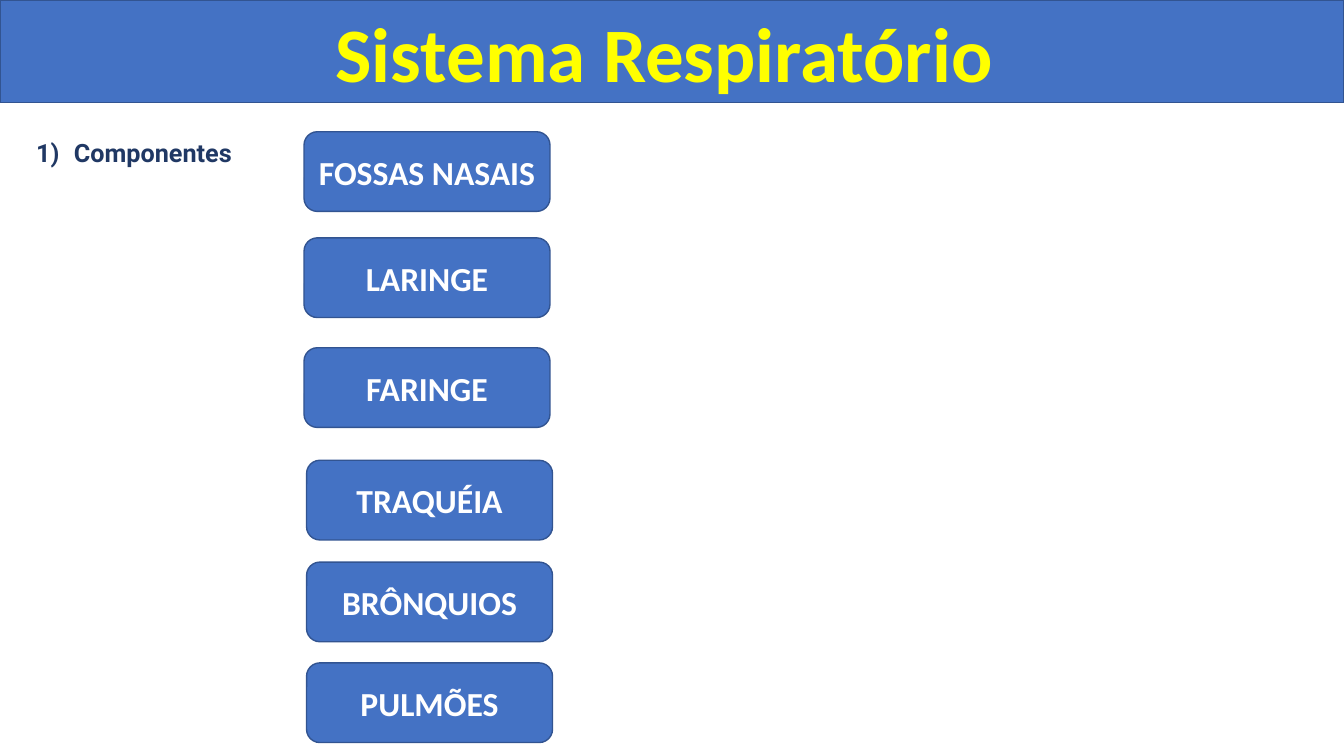
from lxml.etree import Element
from pptx import Presentation
from pptx.dml.color import RGBColor
from pptx.enum.shapes import MSO_SHAPE as Shape
from pptx.enum.text import MSO_ANCHOR as Anchor, MSO_AUTO_SIZE as AutoSize, PP_ALIGN as Align
from pptx.oxml.ns import qn
from pptx.util import Pt

COLORS = {"blue": "4472C4", "outline": "325491", "yellow": "FFFF00",
          "navy": "203864", "white": "FFFFFF"}
ORGANS = ["FOSSAS NASAIS", "LARINGE", "FARINGE", "TRAQUÉIA", "BRÔNQUIOS", "PULMÕES"]
ORGAN_OFFSETS = [(0, 0), (0, 75.8), (0, 154.3), (1.8, 234.7), (1.8, 307.4), (1.8, 379.4)]


def color(name):
    """Return the named colour."""
    return RGBColor.from_string(COLORS[name])


def write(frame, text, size, font, tint, align):
    """Fill a text frame with one bold paragraph and return it."""
    frame.word_wrap = True
    para = frame.paragraphs[0]
    para.text = text
    para.alignment = align
    para.font.size = Pt(size)
    para.font.name = font
    para.font.bold = True
    para.font.color.rgb = color(tint)
    return para


def add_box(page, kind, left, top, width, height):
    """Add a blue outlined shape."""
    box = page.shapes.add_shape(kind, Pt(left), Pt(top), Pt(width), Pt(height))
    box.shadow.inherit = False
    box.fill.solid()
    box.fill.fore_color.rgb = color("blue")
    box.line.color.rgb = color("outline")
    box.line.width = Pt(1)
    return box


def add_header(page, left, top, width, height):
    """Place the title over a full-width band."""
    band = add_box(page, Shape.RECTANGLE, left, top, width, height)
    title = page.shapes.title
    title.element.addprevious(band.element)
    title.left, title.top = Pt(left + 120.2), Pt(top)
    title.width, title.height = Pt(708.5), Pt(height + 0.7)
    frame = title.text_frame
    write(frame, "Sistema Respiratório", 55, "Calibri", "yellow", Align.CENTER)
    frame.vertical_anchor = Anchor.TOP
    frame.auto_size = AutoSize.SHAPE_TO_FIT_TEXT


def add_topic(page, left, top, width, height):
    """Add the numbered topic heading."""
    box = page.shapes.add_textbox(Pt(left), Pt(top), Pt(width), Pt(height))
    para = write(box.text_frame, "Componentes", 18, "Roboto", "navy", Align.JUSTIFY)
    box.text_frame.auto_size = AutoSize.SHAPE_TO_FIT_TEXT
    properties = para._p.get_or_add_pPr()
    properties.set("marL", str(Pt(27)))
    properties.set("indent", str(-Pt(27)))
    properties.insert(0, Element(qn("a:buAutoNum"), type="arabicParenR"))


def add_organs(page, left, top, width, height):
    """Stack one rounded box for each organ."""
    for organ, (across, down) in zip(ORGANS, ORGAN_OFFSETS):
        box = add_box(page, Shape.ROUNDED_RECTANGLE, left + across, top + down, width, height)
        write(box.text_frame, organ, 24, "Calibri", "white", Align.CENTER)
        box.text_frame.vertical_anchor = Anchor.MIDDLE


def main():
    """Build and save the deck."""
    deck = Presentation()
    deck.slide_width, deck.slide_height = Pt(960), Pt(540)
    page = deck.slides.add_slide(deck.slide_layouts[5])
    add_header(page, 0, 0, 960, 73.4)
    add_topic(page, 18.7, 94.3, 481, 28.8)
    add_organs(page, 217.2, 94.1, 175.7, 56.9)
    deck.save("out.pptx")


if __name__ == "__main__":
    main()
